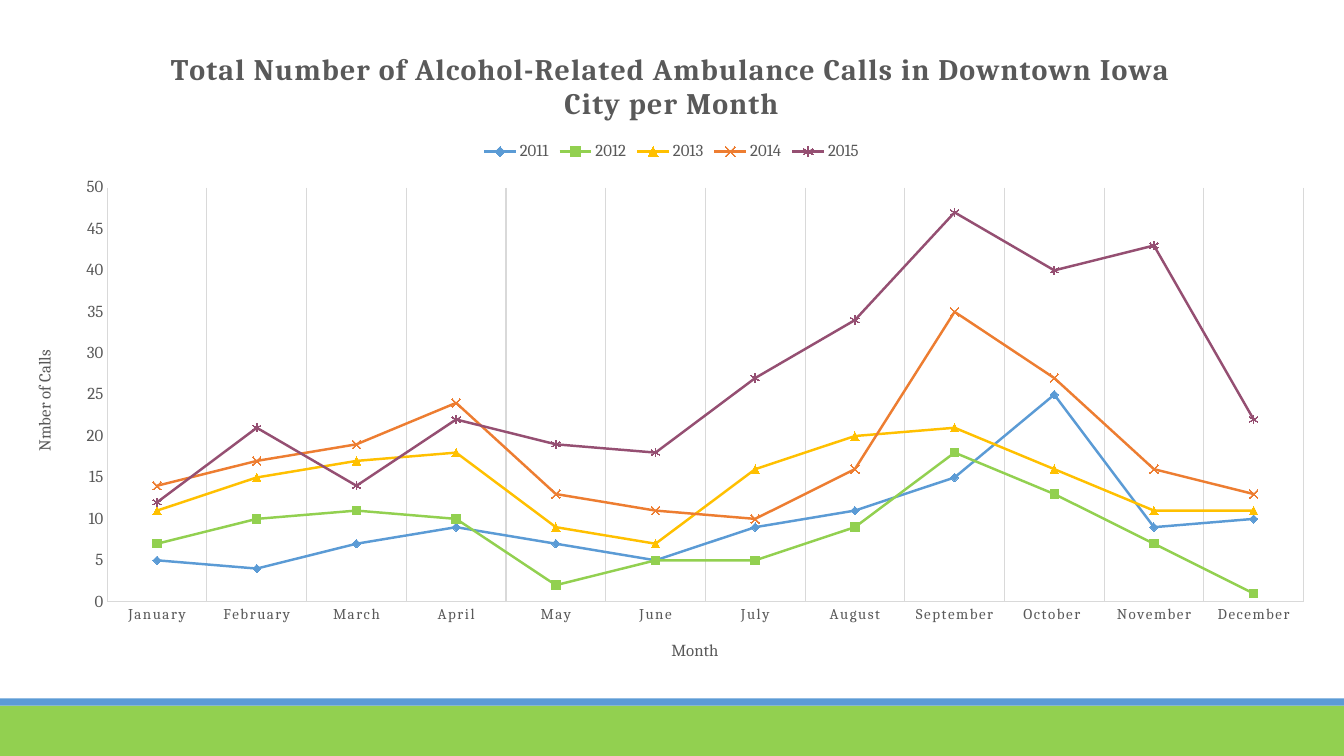
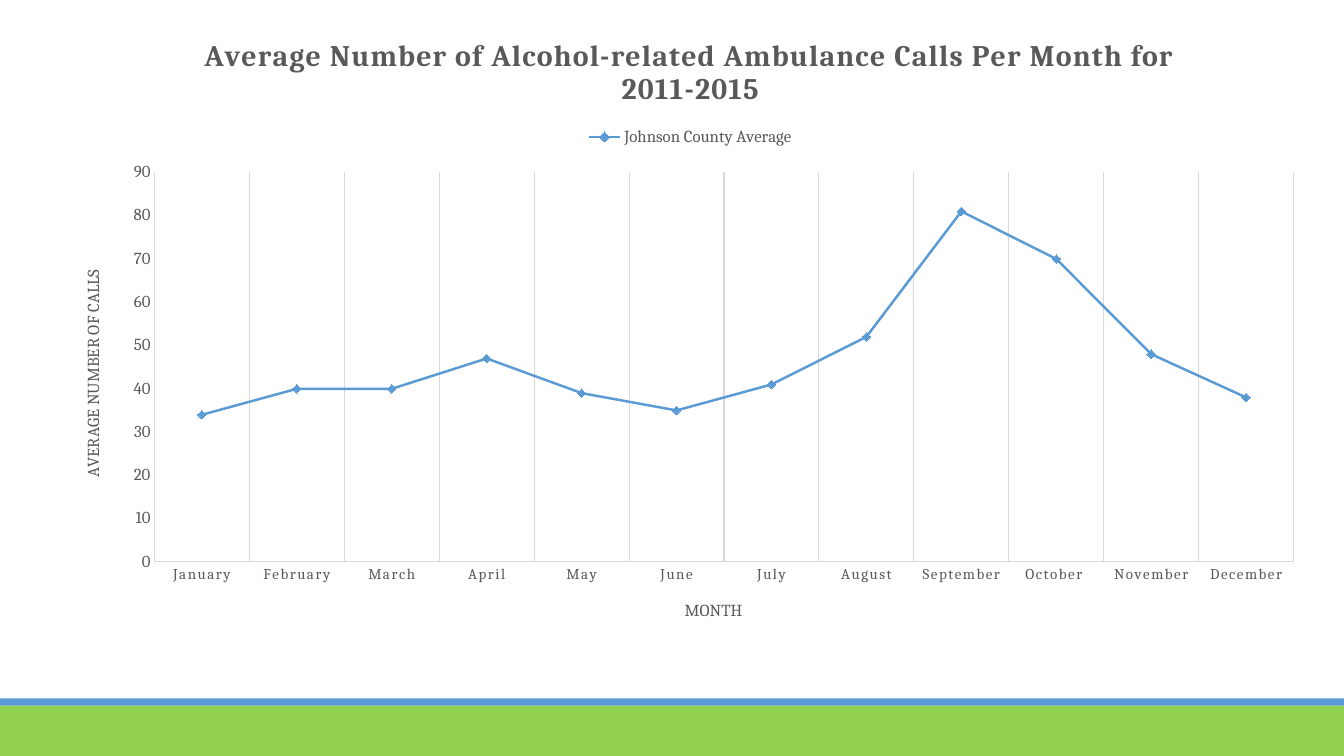
from dataclasses import dataclass

from pptx import Presentation
from pptx.chart.data import CategoryChartData
from pptx.dml.color import RGBColor
from pptx.enum.chart import XL_CHART_TYPE, XL_LEGEND_POSITION, XL_MARKER_STYLE, XL_TICK_MARK
from pptx.enum.shapes import MSO_SHAPE
from pptx.util import Inches, Pt


@dataclass(frozen=True)
class Theme:
    font: str = "Cambria"
    text: str = "595959"
    rule: str = "D9D9D9"
    blue: str = "5B9BD5"
    green: str = "92D050"
    yellow: str = "FFC000"
    orange: str = "ED7D31"
    plum: str = "954F72"
    title_size: float = 21.28
    label_size: float = 11.97
    category_size: float = 10.64
    rule_width: float = 0.75
    series_width: float = 1.75
    marker_size: int = 6
    title_spacing: int = 100
    category_spacing: int = 120


THEME = Theme()
WIDTH, HEIGHT = 13.33, 7.5
MONTHS = ["January", "February", "March", "April", "May", "June", "July",
          "August", "September", "October ", "November", "December"]
SERIES_STYLES = [
    (THEME.blue, XL_MARKER_STYLE.DIAMOND),
    (THEME.green, XL_MARKER_STYLE.SQUARE),
    (THEME.yellow, XL_MARKER_STYLE.TRIANGLE),
    (THEME.orange, XL_MARKER_STYLE.X),
    (THEME.plum, XL_MARKER_STYLE.STAR),
]
OPEN_MARKERS = (XL_MARKER_STYLE.X, XL_MARKER_STYLE.STAR)

CALLS_BY_YEAR = {
    "2011": [5, 4, 7, 9, 7, 5, 9, 11, 15, 25, 9, 10],
    "2012": [7, 10, 11, 10, 2, 5, 5, 9, 18, 13, 7, 1],
    "2013": [11, 15, 17, 18, 9, 7, 16, 20, 21, 16, 11, 11],
    "2014": [14, 17, 19, 24, 13, 11, 10, 16, 35, 27, 16, 13],
    "2015": [12, 21, 14, 22, 19, 18, 27, 34, 47, 40, 43, 22],
}
AVERAGE_CALLS = {
    "Johnson County Average": [34, 40, 40, 47, 39, 35, 41, 52, 81, 70, 48, 38],
}


class Report:
    def __init__(self, theme):
        self.theme = theme
        self.deck = Presentation()
        self.deck.slide_width = Inches(WIDTH)
        self.deck.slide_height = Inches(HEIGHT)
        self.page = None

    def add_page(self):
        self.page = self.deck.slides.add_slide(self.deck.slide_layouts[6])

    def add_master_band(self, top, height, color, number):
        """Draw a full-width band and move it to the slide master."""
        band = self.page.shapes.add_shape(
            MSO_SHAPE.RECTANGLE, 0, Inches(top), Inches(WIDTH), Inches(height))
        band.name = f"Band {number}"
        band.shadow.inherit = False
        band.fill.solid()
        band.fill.fore_color.rgb = RGBColor.from_string(color)
        band.line.fill.background()
        band.element.nvSpPr.cNvPr.id = 100 + number
        self.deck.slide_master.shapes.element.append(band.element)

    def style_font(self, font, size, bold=False):
        font.name = self.theme.font
        font.size = Pt(size)
        font.bold = bold
        font.color.rgb = RGBColor.from_string(self.theme.text)

    def style_rule(self, line):
        line.color.rgb = RGBColor.from_string(self.theme.rule)
        line.width = Pt(self.theme.rule_width)

    def set_title(self, owner, text, size, bold=False):
        """Set the title of a chart or of an axis."""
        frame = owner.text_frame
        frame.text = text
        self.style_font(frame.paragraphs[0].font, size, bold)

    def style_axis(self, axis, title, label_size):
        axis.major_tick_mark = axis.minor_tick_mark = XL_TICK_MARK.NONE
        self.style_rule(axis.format.line)
        self.style_font(axis.tick_labels.font, label_size)
        self.set_title(axis.axis_title, title, self.theme.label_size)

    def style_series(self, series, color, marker_style):
        rgb = RGBColor.from_string(color)
        series.smooth = False
        series.format.line.color.rgb = rgb
        series.format.line.width = Pt(self.theme.series_width)
        marker = series.marker
        marker.style = marker_style
        marker.size = self.theme.marker_size
        marker.format.line.color.rgb = rgb
        if marker_style in OPEN_MARKERS:
            marker.format.fill.background()
        else:
            marker.format.fill.solid()
            marker.format.fill.fore_color.rgb = rgb

    def add_line_chart(self, box, title, axis_titles, values, top_value, step):
        theme = self.theme
        data = CategoryChartData()
        data.categories = MONTHS
        for name, numbers in values.items():
            data.add_series(name, numbers)
        chart = self.page.shapes.add_chart(
            XL_CHART_TYPE.LINE_MARKERS, *map(Inches, box), data).chart
        chart.font.name = theme.font
        chart.font.size = Pt(10)

        chart.has_title = True
        self.set_title(chart.chart_title, title, theme.title_size, bold=True)
        chart.chart_title.include_in_layout = False
        chart.has_legend = True
        chart.legend.position = XL_LEGEND_POSITION.TOP
        chart.legend.include_in_layout = False
        self.style_font(chart.legend.font, theme.label_size)

        months, calls = chart.category_axis, chart.value_axis
        self.style_axis(months, axis_titles[0], theme.category_size)
        self.style_axis(calls, axis_titles[1], theme.label_size)
        months.has_major_gridlines = True
        self.style_rule(months.major_gridlines.format.line)
        calls.has_major_gridlines = False
        calls.minimum_scale, calls.maximum_scale = 0, top_value
        calls.major_unit = step

        plot = chart.plots[0]
        plot.vary_by_categories = False
        for series, style in zip(plot.series, SERIES_STYLES):
            self.style_series(series, *style)
        self.space_letters(chart, "c:chart/c:title", theme.title_spacing)
        self.space_letters(chart, ".//c:catAx/c:txPr", theme.category_spacing)

    def space_letters(self, chart, place, spacing):
        for properties in chart.element.xpath(f"{place}//a:defRPr"):
            properties.set("spc", str(spacing))


def main():
    report = Report(THEME)
    report.add_page()
    report.add_master_band(7, 0.5, THEME.green, 1)
    report.add_master_band(6.93, 0.07, THEME.blue, 2)
    report.add_line_chart(
        (0.13, 0.27, 13.06, 6.5),
        "Total Number of Alcohol-Related Ambulance Calls in Downtown Iowa City per Month",
        ("Month", "Nmber of Calls"), CALLS_BY_YEAR, 50, 5)

    report.add_page()
    report.add_line_chart(
        (0.61, 0.13, 12.47, 6.24),
        "Average Number of Alcohol-related Ambulance Calls Per Month for 2011-2015",
        ("MONTH", "AVERAGE NUMBER OF CALLS"), AVERAGE_CALLS, 90, 10)
    report.deck.save("out.pptx")


if __name__ == "__main__":
    main()
